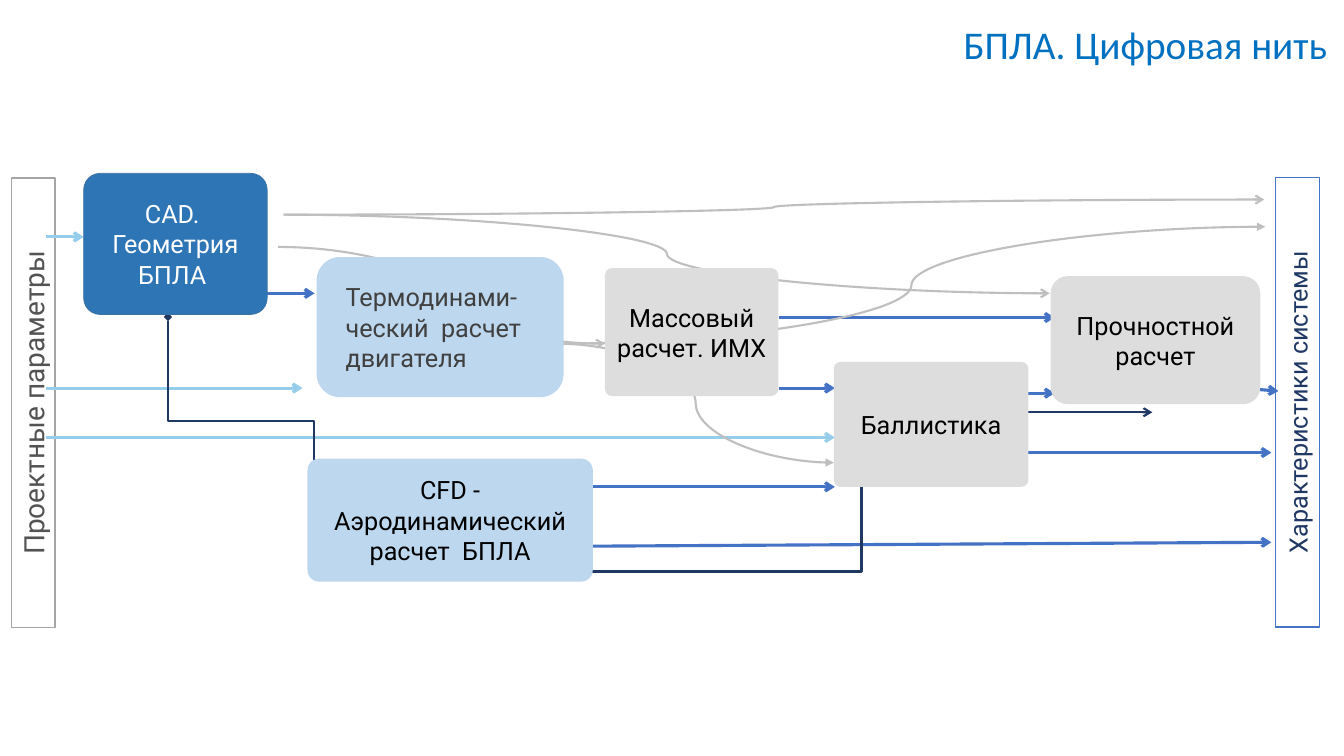
from lxml import etree
from pptx import Presentation
from pptx import util as u
from pptx.dml.color import RGBColor
from pptx.enum import shapes, text
from pptx.oxml.ns import qn

HUES = {
    "white": "FFFFFF", "black": "000000", "dark": "404040", "slate": "535353",
    "navy": "203864", "blue": "4472C4", "sky": "95CDEA", "mist": "BFBFBF",
    "steel": "2E75B6", "edge": "3D71A1", "pale": "BDD7EE", "grey": "DDDDDD",
    "ash": "A5A5A5", "title": "0070C0",
}
KIND = shapes.MSO_CONNECTOR
LEFT, MID, RIGHT = text.PP_ALIGN.LEFT, text.PP_ALIGN.CENTER, text.PP_ALIGN.RIGHT


def hue(name):
    return RGBColor.from_string(HUES[name])


def adjust(item, values):
    for key, value in values.items():
        setattr(item, key, value)


class Board:
    """Style and current slide."""
    face = "Roboto"
    pad = u.Inches(0.05)

    def __init__(self, deck):
        self.slide = deck.slides.add_slide(deck.slide_layouts[5])
        self.items = self.slide.shapes

    def label(self, shape, words, size, color, align=MID, face=None, **frame):
        adjust(shape.text_frame, {
            "text": words, "word_wrap": True,
            "auto_size": text.MSO_AUTO_SIZE.NONE,
            "vertical_anchor": text.MSO_ANCHOR.MIDDLE, **frame})
        para = shape.text_frame.paragraphs[0]
        para.alignment = align
        adjust(para.font, {"size": u.Pt(size), "name": face or self.face})
        para.font.color.rgb = hue(color)
        return para

    def title(self, words, left, top, width, height):
        head = self.items.title
        adjust(head, {"left": u.Inches(left), "top": u.Inches(top),
                      "width": u.Inches(width), "height": u.Inches(height)})
        para = self.label(head, words, 28, "title", RIGHT, "Calibri")
        para.line_spacing = 0.9

    def shape(self, kind, place, fill, edge=None, weight=1):
        form = self.items.add_shape(kind, *map(u.Inches, place))
        form.shadow.inherit = False
        form.fill.solid()
        form.fill.fore_color.rgb = hue(fill)
        if edge:
            form.line.color.rgb = hue(edge)
            form.line.width = u.Pt(weight)
        else:
            form.line.fill.background()
        return form

    def bar(self, words, place, edge, size, color):
        form = self.shape(shapes.MSO_SHAPE.RECTANGLE, place, "white", edge)
        form.rotation = 270
        self.label(form, words, size, color)

    def box(self, words, place, curve, fill, color="black", edge=None,
            align=MID, inset=None):
        form = self.shape(shapes.MSO_SHAPE.ROUNDED_RECTANGLE, place, fill, edge, 0.5)
        form.adjustments[0] = curve
        self.label(form, words, 18, color, align, margin_right=self.pad,
                   margin_left=inset or self.pad)

    def link(self, ends, color, weight, kind=KIND.STRAIGHT, head=None,
             tail="arrow", turn=0):
        wire = self.items.add_connector(kind, *map(u.Inches, ends))
        wire.line.color.rgb = hue(color)
        wire.line.width = u.Pt(weight)
        props = wire._element.spPr
        if turn:
            props.find(qn("a:xfrm")).set("rot", str(turn * 60000))
        for tag, tip in (("a:headEnd", head), ("a:tailEnd", tail)):
            if tip:
                etree.SubElement(props.find(qn("a:ln")), qn(tag), type=tip)
        etree.SubElement(props, qn("a:effectLst"))


def main():
    deck = Presentation()
    deck.slide_width, deck.slide_height = u.Inches(13.33), u.Inches(7.5)
    board = Board(deck)
    board.title("БПЛА. Цифровая нить", 5.21, 0.13, 8.05, 0.67)

    # Side bars
    board.bar("Xарактеристики системы", (10.64, 3.77, 4.46, 0.44), "blue", 18, "navy")
    board.bar("Проектные параметры", (-1.9, 3.78, 4.46, 0.43), "ash", 20, "slate")

    # Inputs from the design parameters
    for end, y in ((3, 3.85), (0.83, 2.35), (8.28, 4.34)):
        board.link((0.46, y, end, y), "sky", 2.25)

    # Flows between the models and to the results
    for ends in ((7.73, 3.85, 8.28, 3.85), (10.07, 3.9, 10.46, 3.9),
                 (7.73, 3.15, 10.46, 3.15), (5.55, 4.83, 8.28, 4.83),
                 (2.57, 2.91, 3.12, 2.91), (10.1, 4.49, 12.61, 4.49),
                 (12.31, 3.85, 12.68, 3.88), (5.66, 5.42, 12.61, 5.38)):
        board.link(ends, "blue", 2.25)

    # Bent links
    for ends, turn in (((5.66, 5.67, 11.43, 4.09), 0),
                       ((3.42, 3.45, 1.36, 4.9), 270)):
        board.link(ends, "navy", 1.5, KIND.ELBOW, "diamond", turn=turn)

    # Curved links
    for ends, tip in (((5.53, 3.41, 8.27, 4.59), "triangle"),
                      ((2.82, 2.13, 10.41, 2.91), "arrow"),
                      ((5.53, 3.41, 12.55, 2.25), "triangle"),
                      ((2.81, 2.13, 12.54, 1.98), "arrow"),
                      ((2.76, 2.45, 6, 3.41), "arrow")):
        board.link(ends, "mist", 1.5, KIND.CURVE, tail=tip)

    # Model boxes
    board.box("Термодинами-ческий  расчет  \vдвигателя", (3.14, 2.55, 2.45, 1.39),
              0.167, "pale", "dark", align=LEFT, inset=u.Inches(0.22))
    board.box("CAD. \vГеометрия БПЛА ", (0.83, 1.72, 1.82, 1.4),
              0.116, "steel", "white", "edge")
    board.box("Баллистика", (8.27, 3.59, 1.93, 1.24), 0.055, "grey")
    board.box("CFD - Аэродинамический расчет  БПЛА", (3.05, 4.55, 2.83, 1.22),
              0.094, "pale")
    board.box("Прочностной расчет", (10.42, 2.74, 2.08, 1.27), 0.134, "grey")
    board.box("Массовый расчет. ИМХ", (6, 2.66, 1.72, 1.27), 0.055, "grey")

    deck.save("out.pptx")


if __name__ == "__main__":
    main()
